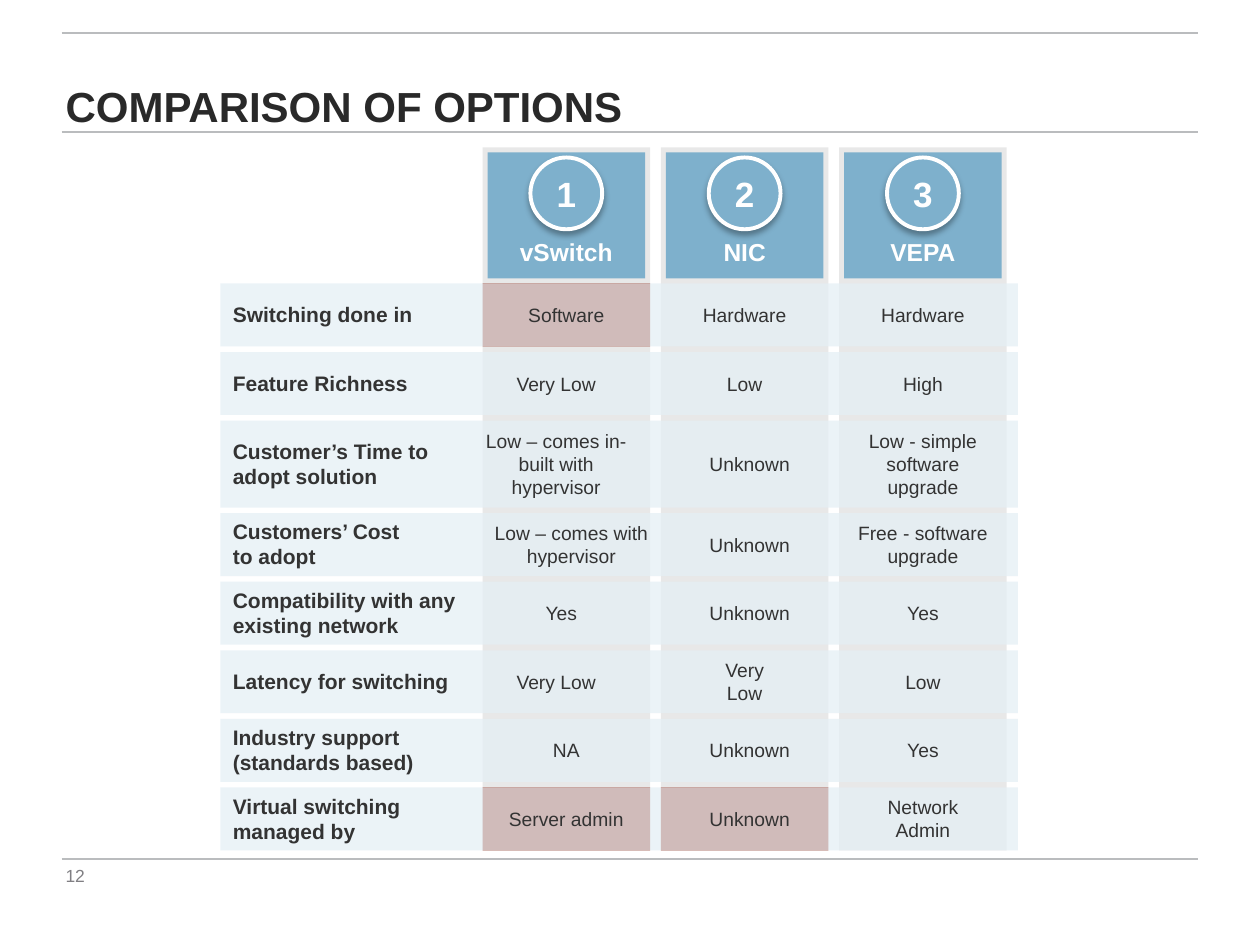
from dataclasses import dataclass
from lxml import etree
from pptx import Presentation
from pptx.dml.color import RGBColor
from pptx.enum.shapes import MSO_CONNECTOR as CONN, MSO_SHAPE as SHAPE
from pptx.enum.text import MSO_ANCHOR as ANCHOR, MSO_AUTO_SIZE as AUTO, PP_ALIGN as ALIGN
from pptx.oxml import parse_xml
from pptx.oxml.ns import nsdecls, qn
from pptx.util import Inches, Pt


@dataclass(frozen=True)
class Theme:
    font: str = "Arial"
    title: str = "292929"
    body: str = "333333"
    muted: str = "807F83"
    rule: str = "BABCBE"
    column: str = "E8E8E8"
    band: str = "E5EFF5"
    header: str = "7EB0CC"
    alert: str = "93220B"
    white: str = "FFFFFF"
    title_size: float = 24
    number_size: float = 20
    header_size: float = 14
    label_size: float = 12
    cell_size: float = 11
    page_size: float = 10


@dataclass(frozen=True)
class Box:
    x: float
    y: float
    w: float
    h: float

    def emu(self):
        return [Inches(v) for v in (self.x, self.y, self.w, self.h)]

    def inset(self, d):
        return Box(self.x + d, self.y + d, self.w - 2 * d, self.h - 2 * d)

    def centred(self, w, h, dx=0):
        return Box(self.x + (self.w - w) / 2 + dx, self.y + (self.h - h) / 2, w, h)


@dataclass(frozen=True)
class Cell:
    text: str
    w: float = 1.17
    dx: float = 0
    lines: int = 1
    alert: bool = False


T = Theme()
COL_LEFT, COL_W, COL_PITCH = 3.83, 1.33, 1.415
TABLE = Box(1.75, 1.17, 6.33, 5.58)
HEADER_H = 1.08
PAD = 0.1
OPTIONS = ["vSwitch", "NIC", "VEPA"]
UNKNOWN = Cell("Unknown", 0.92, 0.04)
YES = Cell("Yes", 0.92)
ROWS = [
    ("Switching done in", 0.5,
     [Cell("Software", alert=True), Cell("Hardware"), Cell("Hardware", 0.99)]),
    ("Feature Richness", 0.5,
     [Cell("Very Low", dx=-0.08), Cell("Low"), Cell("High", 0.68)]),
    ("Customer’s Time to \nadopt solution", 0.69,
     [Cell("Low – comes in-\n built with \nhypervisor", 1.67, -0.08, 3), UNKNOWN,
      Cell("Low - simple software upgrade", 1.25, lines=3)]),
    ("Customers’ Cost \nto adopt", 0.5,
     [Cell("Low – comes with hypervisor", 1.58, 0.04, 2), UNKNOWN,
      Cell("Free - software upgrade", 1.32, lines=2)]),
    ("Compatibility with any \nexisting network", 0.5,
     [Cell("Yes", 0.75, -0.04), UNKNOWN, YES]),
    ("Latency for switching", 0.5,
     [Cell("Very Low", 1, -0.08), Cell("Very Low", 0.75, lines=2), Cell("Low", 0.68)]),
    ("Industry support \n(standards based)", 0.5,
     [Cell("NA", 0.83), UNKNOWN, YES]),
    ("Virtual switching \nmanaged by", 0.5,
     [Cell("Server admin", alert=True), Cell("Unknown", 0.92, 0.04, alert=True),
      Cell("Network Admin", 0.82, lines=2)]),
]


def rgb(value):
    return RGBColor.from_string(value)


def write(tf, text, size, color, bold=False, align=ALIGN.LEFT):
    p = tf.paragraphs[0]
    p.text = text
    p.alignment = align
    p.font.name = T.font
    p.font.size = Pt(size)
    p.font.bold = bold
    p.font.color.rgb = rgb(color)
    return p


def add_text(s, box, text, size, color, bold=False, align=ALIGN.LEFT):
    tf = s.shapes.add_textbox(*box.emu()).text_frame
    tf.word_wrap = True
    tf.auto_size = AUTO.SHAPE_TO_FIT_TEXT
    write(tf, text, size, color, bold, align)
    return tf


def add_block(s, box, color, kind=SHAPE.RECTANGLE, alpha=None):
    sp = s.shapes.add_shape(kind, *box.emu())
    sp.shadow.inherit = False
    sp.fill.solid()
    sp.fill.fore_color.rgb = rgb(color)
    sp.line.fill.background()
    if alpha:
        clr = sp.fill._xPr.find(".//" + qn("a:srgbClr"))
        etree.SubElement(clr, qn("a:alpha"), val=str(alpha * 1000))
    return sp


def add_rule(s, x, y, w):
    line = s.shapes.add_connector(CONN.STRAIGHT, Inches(x), Inches(y), Inches(x + w), Inches(y))
    line.line.color.rgb = rgb(T.rule)
    line.line.width = Pt(1)
    etree.SubElement(line._element.spPr, qn("a:effectLst"))


def add_frame(s, box):
    for y in (box.y + box.h, 1.05, box.y):
        add_rule(s, box.x, y, box.w)
    page = add_text(s, Box(0.52, 6.81, 0.58, 0.22), "12", T.page_size, T.muted)
    title = add_text(s, Box(0.52, 0.28, 8.99, 0.81), "COMPARISON OF OPTIONS",
                     T.title_size, T.title, True)
    page.margin_left = page.margin_right = page.margin_top = page.margin_bottom = 0
    title.margin_left = 0
    title.paragraphs[0].line_spacing = 0.9
    title.paragraphs[0].space_after = Pt(5.3)
    for tf in (page, title):
        tf.auto_size = AUTO.NONE
        tf.vertical_anchor = ANCHOR.BOTTOM


def add_header(s, box, number, name):
    add_block(s, box.inset(0.04), T.header)
    d = 0.57
    circle = add_block(s, Box(box.x + (box.w - d) / 2, box.y + 0.08, d, d), T.header, SHAPE.OVAL)
    circle.line.color.rgb = rgb(T.white)
    circle.line.width = Pt(2.25)
    effects = circle._element.spPr.find(qn("a:effectLst"))
    effects.append(parse_xml(
        f'<a:outerShdw {nsdecls("a")} blurRad="{Pt(3.5)}" dist="{Pt(2.2)}" dir="5400000" '
        'rotWithShape="0"><a:srgbClr val="000000"><a:alpha val="32000"/></a:srgbClr></a:outerShdw>'))
    circle.text_frame.vertical_anchor = ANCHOR.MIDDLE
    write(circle.text_frame, str(number), T.number_size, T.white, True, ALIGN.CENTER)
    add_text(s, Box(box.x + 0.08, box.y + 0.66, 1.17, 0.34), name,
             T.header_size, T.white, True, ALIGN.CENTER)


def add_row(s, box, label, cells, columns):
    slots = [Box(x, box.y, COL_W, box.h) for x in columns]
    for slot, cell in zip(slots, cells):
        if cell.alert:
            add_block(s, slot, T.alert)
    add_block(s, box, T.band, alpha=75)
    h = PAD + 0.205 * (label.count("\n") + 1)
    add_text(s, Box(box.x, box.y + (box.h - h) / 2, 2.6, h), label, T.label_size, T.body, True)
    for slot, cell in zip(slots, cells):
        add_text(s, slot.centred(cell.w, PAD + 0.185 * cell.lines, cell.dx), cell.text,
                 T.cell_size, T.body, align=ALIGN.CENTER)


def add_comparison(s, box):
    columns = [COL_LEFT + i * COL_PITCH for i in range(len(OPTIONS))]
    for x in columns:
        add_block(s, Box(x, box.y, COL_W, box.h), T.column)
    for i, (x, name) in enumerate(zip(columns, OPTIONS), 1):
        add_header(s, Box(x, box.y, COL_W, HEADER_H), i, name)
    gap = (box.h - HEADER_H - sum(h for _, h, _ in ROWS)) / (len(ROWS) - 1)
    y = box.y + HEADER_H
    for label, h, cells in ROWS:
        add_row(s, Box(box.x, y, box.w, h), label, cells, columns)
        y += h + gap


def main():
    prs = Presentation()
    prs.slide_width, prs.slide_height = Inches(10), Inches(7.5)
    s = prs.slides.add_slide(prs.slide_layouts[6])
    add_frame(s, Box(0.49, 0.26, 9.02, 6.56))
    add_comparison(s, TABLE)
    prs.save("out.pptx")


if __name__ == "__main__":
    main()
